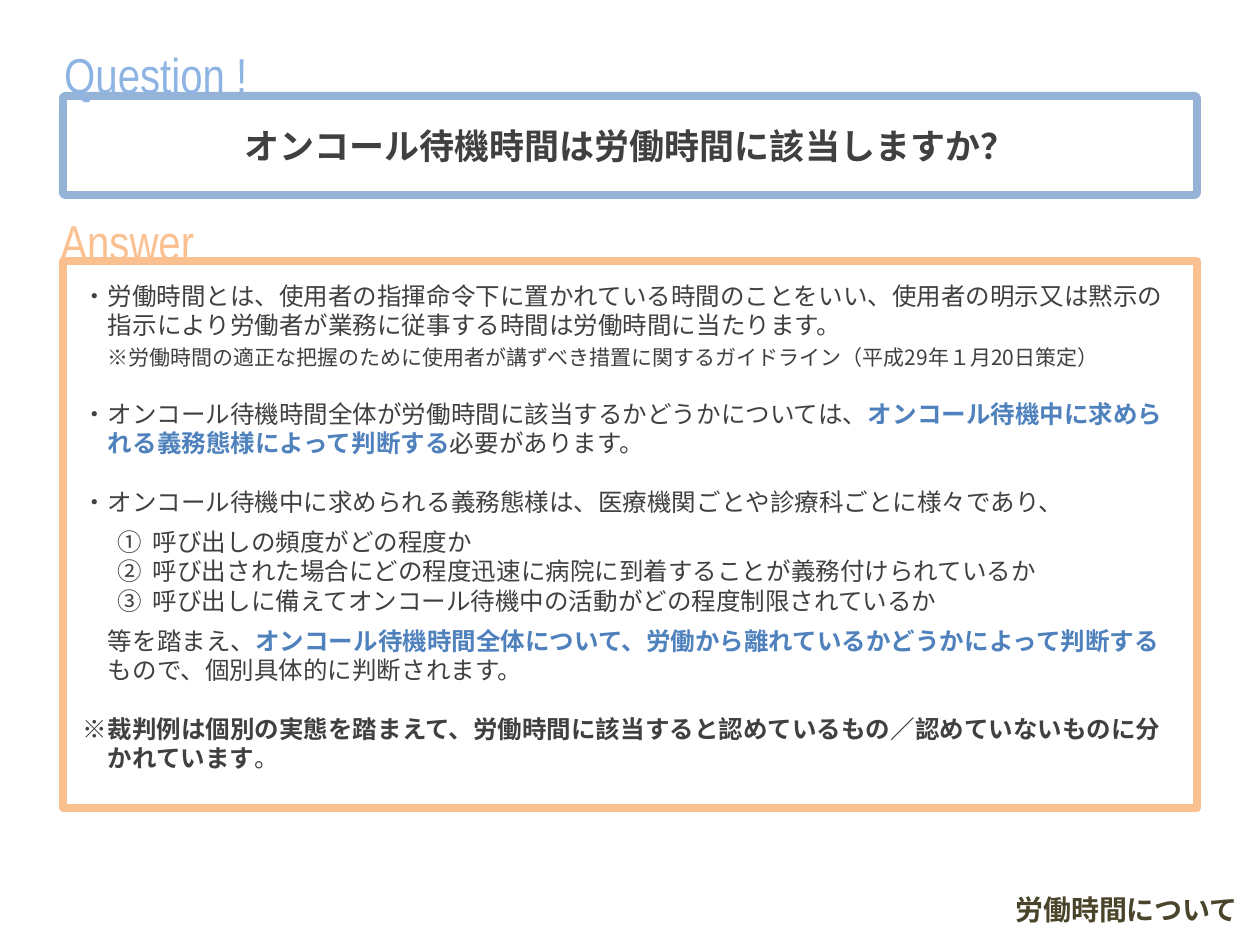
from dataclasses import dataclass

from pptx import Presentation
from pptx.dml.color import RGBColor
from pptx.enum.shapes import MSO_SHAPE
from pptx.enum.text import MSO_ANCHOR, PP_ALIGN
from pptx.util import Emu, Pt

PX = 914400 // 126  # one px in EMU


@dataclass(frozen=True)
class Theme:
    body_font: str = "Noto Sans CJK JP"
    label_font: str = "Arial Narrow"
    ink: str = "404040"
    accent: str = "4F81BD"
    question_line: str = "95B3D7"
    question_label: str = "8EB4E3"
    answer: str = "FAC090"
    footer: str = "4A452A"
    label_size: int = 28
    title_size: int = 20
    footer_size: int = 16
    body_size: int = 14
    note_size: int = 12
    border: float = 4.5
    leading: float = 1.2


THEME = Theme()
BLANK_LINE = THEME.body_size * THEME.leading


def px(value):
    return Emu(value * PX)


def add_span(para, text, size=THEME.body_size, color=THEME.ink, bold=False,
             font=THEME.body_font):
    """Add one run of formatted text."""
    span = para.add_run()
    span.text = text
    span.font.size = Pt(size)
    span.font.bold = bold
    span.font.name = font
    span.font.color.rgb = RGBColor.from_string(color)
    properties = span.font._element
    latin = properties.find("{*}latin")
    east_asian = properties.makeelement(latin.tag.replace("latin", "ea"), {"typeface": font})
    latin.addnext(east_asian)


def format_para(para, align=PP_ALIGN.LEFT, margin=0, indent=0, before=0, after=0,
                leading=None):
    """Set alignment, indents in px and spacing in points."""
    para.alignment = align
    para.space_before = Pt(before)
    para.space_after = Pt(after)
    if leading:
        para.line_spacing = Pt(leading)
    properties = para._p.get_or_add_pPr()
    properties.set("marL", str(px(margin)))
    properties.set("indent", str(px(indent)))


def add_panel(page, left, top, width, height, line=None, corner=None,
              anchor=MSO_ANCHOR.TOP, inset=None):
    """Add an unfilled rounded rectangle and return its text frame."""
    box = page.shapes.add_shape(MSO_SHAPE.ROUNDED_RECTANGLE,
                                px(left), px(top), px(width), px(height))
    box.shadow.inherit = False
    box.fill.background()
    if corner is not None:
        box.adjustments[0] = corner
    if line:
        box.line.color.rgb = RGBColor.from_string(line)
        box.line.width = Pt(THEME.border)
    else:
        box.line.fill.background()
    frame = box.text_frame
    frame.word_wrap = True
    frame.vertical_anchor = anchor
    if inset is not None:
        frame.margin_left = frame.margin_right = px(inset)
        frame.margin_top = frame.margin_bottom = px(inset)
    return frame


def add_label(page, text, color, left, top, width, height, corner=None):
    """Add a heading that sits on the upper edge of a panel."""
    para = add_panel(page, left, top, width, height, corner=corner).paragraphs[0]
    format_para(para, after=6)
    add_span(para, text, THEME.label_size, color, font=THEME.label_font)


def fill_answer(frame):
    """Write the answer: each entry is a paragraph format and its spans."""
    hanging = dict(margin=25, indent=-25)
    flush = dict(margin=25)
    item = dict(margin=70, indent=-35)
    strong = dict(color=THEME.accent, bold=True)
    content = [
        (hanging, [("・労働時間とは、使用者の指揮命令下に置かれている時間のことをいい、使用者の明示又は"
                    "黙示の指示により労働者が業務に従事する時間は労働時間に当たります。", {})]),
        (flush, [("※労働時間の適正な把握のために使用者が講ずべき措置に関するガイドライン"
                  "（平成29年１月20日策定）", dict(size=THEME.note_size))]),
        (dict(hanging, before=BLANK_LINE), [
            ("・オンコール待機時間全体が労働時間に該当するかどうかについては、", {}),
            ("オンコール待機中に求められる義務態様によって判断する", strong),
            ("必要があります。", {})]),
        (dict(hanging, before=BLANK_LINE), [
            ("・オンコール待機中に求められる義務態様は、医療機関ごとや診療科ごとに様々であり、", {})]),
        (dict(item, before=6), [("①\t呼び出しの頻度がどの程度か", {})]),
        (item, [("②\t呼び出された場合にどの程度迅速に病院に到着することが義務付けられているか", {})]),
        (item, [("③\t呼び出しに備えてオンコール待機中の活動がどの程度制限されているか", {})]),
        (dict(flush, before=6), [
            ("等を踏まえ、", {}),
            ("オンコール待機時間全体について、労働から離れているかどうかによって判断する", strong),
            ("もので、個別具体的に判断されます。", {})]),
        (dict(hanging, before=BLANK_LINE), [
            ("※", {}),
            ("裁判例は個別の実態を踏まえて、労働時間に該当すると認めているもの／"
             "認めていないものに分かれています", dict(bold=True)),
            ("。", {})]),
    ]
    for number, (layout, spans) in enumerate(content):
        para = frame.add_paragraph() if number else frame.paragraphs[0]
        format_para(para, leading=BLANK_LINE, **layout)
        for text, style in spans:
            add_span(para, text, **style)


def add_footer(page, text):
    """Add the topic name in the lower right corner."""
    box = page.shapes.add_textbox(px(1003), px(890), px(251), px(32))
    box.text_frame.word_wrap = False
    para = box.text_frame.paragraphs[0]
    format_para(para, leading=THEME.footer_size * THEME.leading * 0.9)
    add_span(para, text, THEME.footer_size, THEME.footer, bold=True)


def main():
    deck = Presentation()
    deck.slide_width, deck.slide_height = px(1260), px(945)
    page = deck.slides.add_slide(deck.slide_layouts[6])

    # Question
    question = add_panel(page, 63, 96, 1134, 99, line=THEME.question_line,
                         corner=0.025, anchor=MSO_ANCHOR.MIDDLE)
    para = question.paragraphs[0]
    format_para(para, align=PP_ALIGN.CENTER, leading=THEME.title_size * THEME.leading)
    add_span(para, "オンコール待機時間は労働時間に該当しますか？", THEME.title_size, bold=True)
    add_label(page, "Question !", THEME.question_label, 48, 34, 575, 79)

    # Answer
    fill_answer(add_panel(page, 63, 261, 1134, 547, line=THEME.answer, corner=0, inset=20))
    add_label(page, "Answer", THEME.answer, 48, 205, 692, 72, corner=0)

    # Footer
    add_footer(page, "労働時間について")
    deck.save("out.pptx")


if __name__ == "__main__":
    main()
